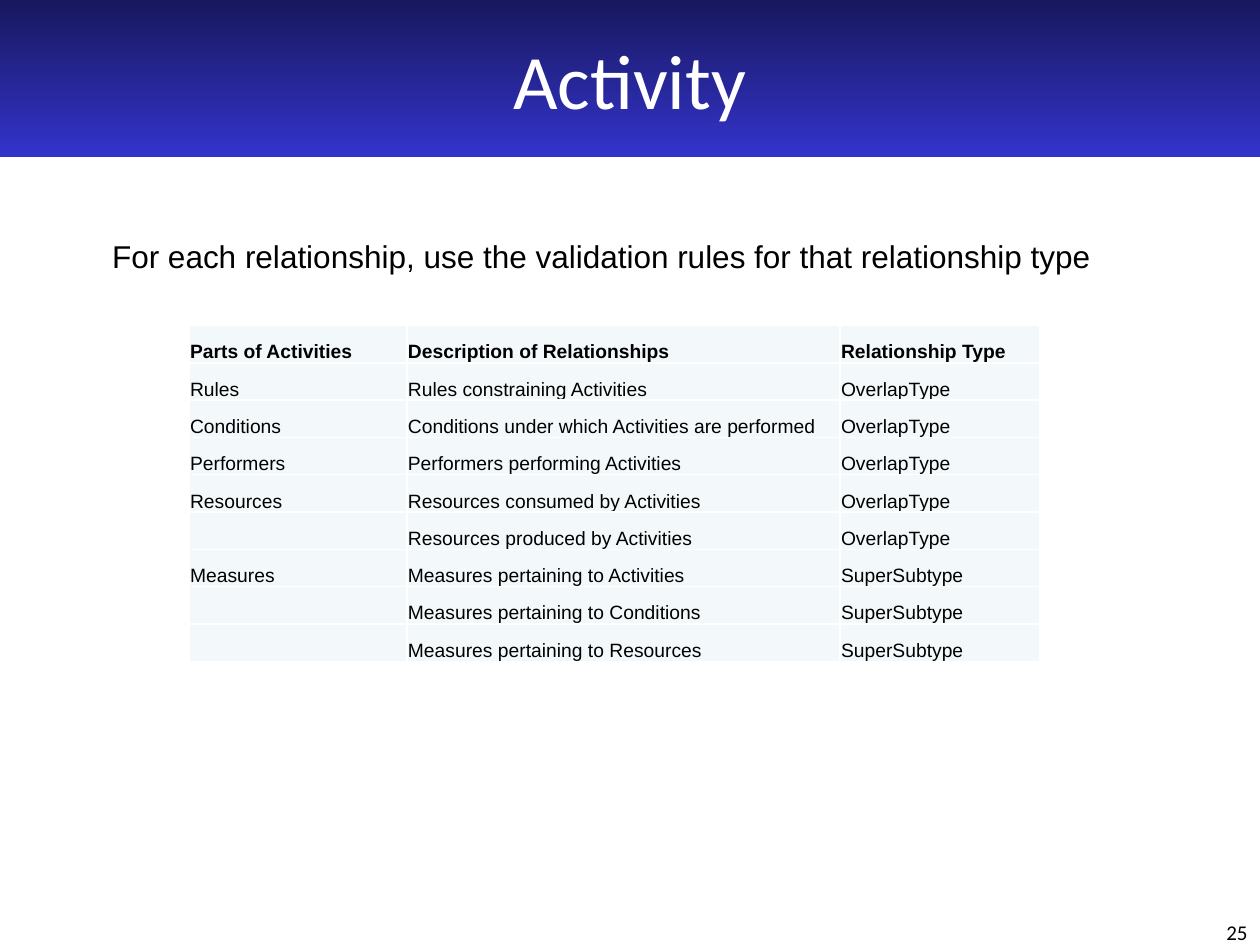
from lxml import etree
from pptx import Presentation
from pptx.dml.color import RGBColor
from pptx.enum.text import MSO_ANCHOR, MSO_AUTO_SIZE, PP_ALIGN
from pptx.oxml.ns import qn
from pptx.util import Pt

MIDDLE, BOTTOM = MSO_ANCHOR.MIDDLE, MSO_ANCHOR.BOTTOM
LEFT, CENTER, RIGHT = PP_ALIGN.LEFT, PP_ALIGN.CENTER, PP_ALIGN.RIGHT
FIT_SHAPE = MSO_AUTO_SIZE.SHAPE_TO_FIT_TEXT
COLORS = {"navy": "18185E", "blue": "3333CC", "white": "FFFFFF",
          "black": "000000", "cell": "F3F9FA"}
TITLE_ONLY = 5


def write(text_frame, text, font_name, size, color="black", align=LEFT, bold=False):
    text_frame.text = text
    paragraph = text_frame.paragraphs[0]
    paragraph.alignment = align
    for run in paragraph.runs:
        run.font.name = font_name
        run.font.size = Pt(size)
        run.font.bold = bold
        run.font.color.rgb = RGBColor.from_string(COLORS[color])


def add_borders(cell, color, width):
    properties = cell._tc.get_or_add_tcPr()
    for side in ("a:lnL", "a:lnR", "a:lnT", "a:lnB"):
        line = etree.SubElement(properties, qn(side), w=str(Pt(width)))
        fill = etree.SubElement(line, qn("a:solidFill"))
        etree.SubElement(fill, qn("a:srgbClr"), val=COLORS[color])


presentation = Presentation()
presentation.slide_width = Pt(720)
presentation.slide_height = Pt(540)
slide = presentation.slides.add_slide(presentation.slide_layouts[TITLE_ONLY])

title = slide.shapes.title
title.left, title.top, title.width, title.height = Pt(0), Pt(0), Pt(720), Pt(90)
title.fill.gradient()
title.fill.gradient_angle = 270
for stop, color, position in zip(title.fill.gradient_stops, ("navy", "blue"), (0, 1)):
    stop.color.rgb = RGBColor.from_string(COLORS[color])
    stop.position = position
title.text_frame.vertical_anchor = MIDDLE
write(title.text_frame, "Activity", "Calibri", 44, "white", CENTER)

page_number = slide.shapes.add_textbox(Pt(552), Pt(522), Pt(168), Pt(18))
page_number.text_frame.word_wrap = True
write(page_number.text_frame, "25", "Calibri", 12, align=RIGHT)

rows = [
    ("Parts of Activities", "Description of Relationships", "Relationship Type"),
    ("Rules", "Rules constraining Activities", "OverlapType"),
    ("Conditions", "Conditions under which Activities are performed", "OverlapType"),
    ("Performers", "Performers performing Activities", "OverlapType"),
    ("Resources", "Resources consumed by Activities", "OverlapType"),
    ("", "Resources produced by Activities", "OverlapType"),
    ("Measures", "Measures pertaining to Activities", "SuperSubtype"),
    ("", "Measures pertaining to Conditions", "SuperSubtype"),
    ("", "Measures pertaining to Resources", "SuperSubtype"),
]
column_widths = (124.5, 247.5, 114)
row_height = 21.33
table = slide.shapes.add_table(
    len(rows), len(column_widths), Pt(108), Pt(186),
    Pt(sum(column_widths)), Pt(row_height * len(rows))).table
for column, width in zip(table.columns, column_widths):
    column.width = Pt(width)
for row_index, row in enumerate(rows):
    table.rows[row_index].height = Pt(row_height)
    for column_index, text in enumerate(row):
        cell = table.cell(row_index, column_index)
        cell.margin_left = cell.margin_right = cell.margin_top = Pt(0.6)
        cell.margin_bottom = Pt(0)
        cell.vertical_anchor = BOTTOM
        add_borders(cell, "white", 1)
        cell.fill.solid()
        cell.fill.fore_color.rgb = RGBColor.from_string(COLORS["cell"])
        write(cell.text_frame, text, "Arial", 11, bold=row_index == 0)
        if not text:
            paragraph = cell.text_frame.paragraphs[0]
            etree.SubElement(paragraph._p, qn("a:endParaRPr"), sz="1100")

instruction = slide.shapes.add_textbox(Pt(57), Pt(132), Pt(579), Pt(29))
instruction.text_frame.word_wrap = False
instruction.text_frame.auto_size = FIT_SHAPE
write(instruction.text_frame,
      "For each relationship, use the validation rules for that relationship type",
      "Arial", 18)

presentation.save("out.pptx")
